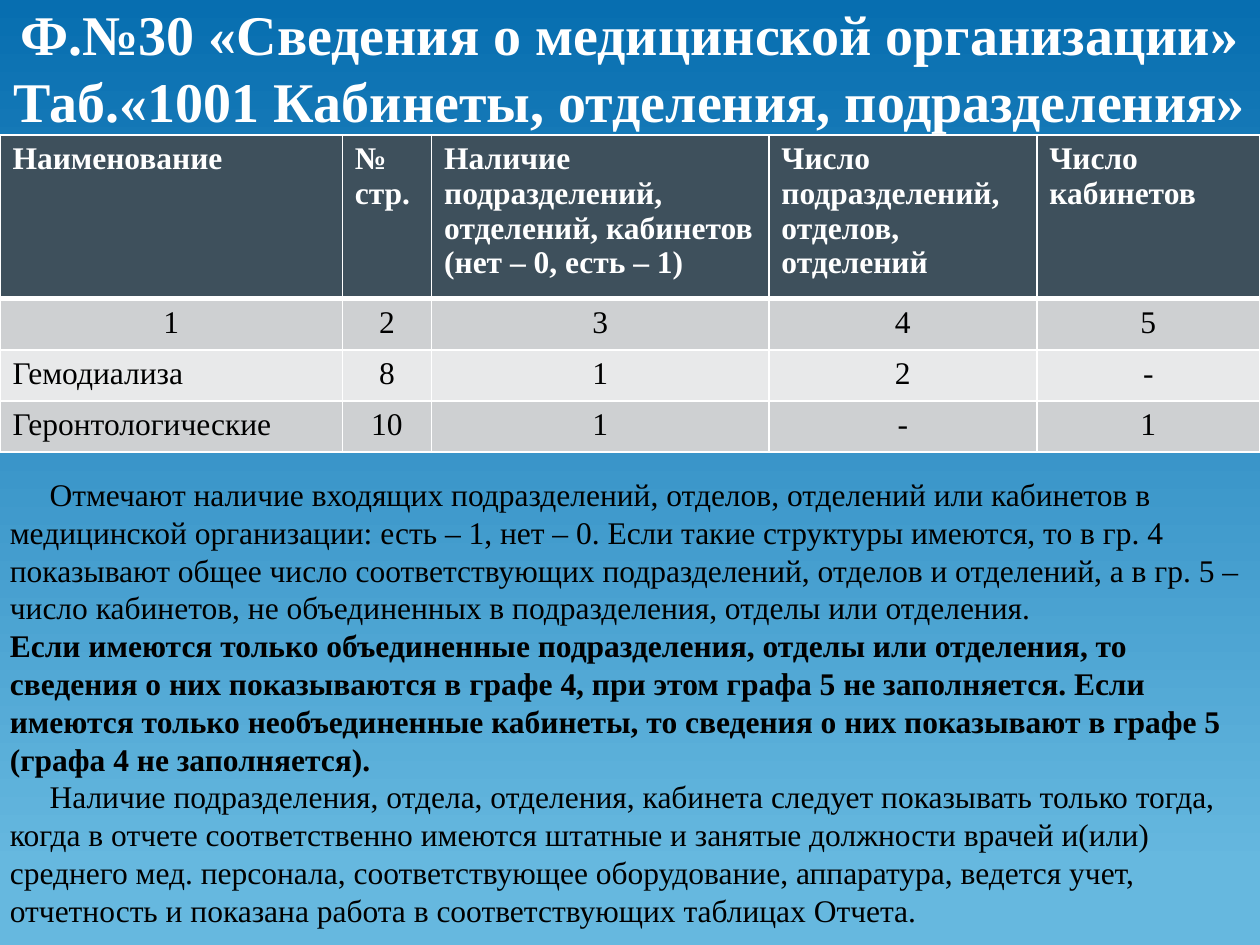
from lxml import etree
from pptx import Presentation
from pptx.dml.color import RGBColor
from pptx.enum.text import MSO_ANCHOR, PP_ALIGN
from pptx.oxml.ns import qn
from pptx.util import Cm, Pt

WHITE = RGBColor(0xFF, 0xFF, 0xFF)
BLACK = RGBColor(0x00, 0x00, 0x00)
HEADER_FILL = RGBColor(0x3E, 0x50, 0x5C)
BAND_FILLS = (RGBColor(0xCE, 0xD0, 0xD2), RGBColor(0xE8, 0xE9, 0xEA))
GRADIENT = ((0, RGBColor(0x07, 0x6E, 0xB0)), (0.92, RGBColor(0x66, 0xB8, 0xDF)))
FONT = "Times New Roman"

TITLE = "Ф.№30 «Сведения о медицинской организации»\vТаб.«1001 Кабинеты, отделения, подразделения»"
COLUMN_WIDTHS = (6.9, 1.8, 6.8, 5.4, 4.5)
ROWS = (
    ("Наименование", "№ стр.",
     "Наличие подразделений, отделений, кабинетов (нет – 0, есть – 1)",
     "Число подразделений, отделов, отделений", "Число кабинетов"),
    ("1", "2", "3", "4", "5"),
    ("Гемодиализа", "8", "1", "2", "-"),
    ("Геронтологические", "10", "1", "-", "1"),
)
# Text, bold, first-line indent in cm
NOTES = (
    ("Отмечают наличие входящих подразделений, отделов, отделений или кабинетов в "
     "медицинской организации: есть – 1, нет – 0. Если такие структуры имеются, то в гр. 4 "
     "показывают общее число соответствующих подразделений, отделов и отделений, а в гр. 5 – "
     "число кабинетов, не объединенных в подразделения, отделы или отделения.", False, 0.8),
    ("Если имеются только объединенные подразделения, отделы или отделения, то "
     "сведения о них показываются в графе 4, при этом графа 5 не заполняется. Если "
     "имеются только необъединенные кабинеты, то сведения о них показывают в графе 5 "
     "(графа 4 не заполняется).", True, 0),
    ("Наличие подразделения, отдела, отделения, кабинета следует показывать только тогда, "
     "когда в отчете соответственно имеются штатные и занятые должности врачей и(или) "
     "среднего мед. персонала, соответствующее оборудование, аппаратура, ведется учет, "
     "отчетность и показана работа в соответствующих таблицах Отчета.", False, 0.8),
)


def format_paragraph(p, size, color, bold, align=PP_ALIGN.LEFT):
    p.alignment = align
    for r in p.runs:
        r.font.name = FONT
        r.font.size = Pt(size)
        r.font.bold = bold
        r.font.color.rgb = color


def set_borders(cell, top, bottom):
    """Draw white borders; top and bottom are widths in points."""
    tc_pr = cell._tc.get_or_add_tcPr()
    sides = (("a:lnL", 1), ("a:lnR", 1), ("a:lnT", top), ("a:lnB", bottom))
    for i, (tag, width) in enumerate(sides):
        ln = etree.Element(qn(tag), w=str(Pt(width)))
        fill = etree.SubElement(ln, qn("a:solidFill"))
        etree.SubElement(fill, qn("a:srgbClr"), val=str(WHITE))
        tc_pr.insert(i, ln)


def set_background(slide):
    fill = slide.background.fill
    fill.gradient()
    fill.gradient_angle = 270
    for stop, (position, color) in zip(fill.gradient_stops, GRADIENT):
        stop.position = position
        stop.color.rgb = color


def add_title(slide, left, top, width, height):
    tf = slide.shapes.add_textbox(left, top, width, height).text_frame
    tf.word_wrap = True
    tf.margin_left = tf.margin_right = tf.margin_top = tf.margin_bottom = 0
    tf.vertical_anchor = MSO_ANCHOR.MIDDLE
    tf.text = TITLE
    format_paragraph(tf.paragraphs[0], 32, WHITE, True, PP_ALIGN.CENTER)


def add_departments_table(slide, left, top, width, header_height, row_height):
    height = header_height + row_height * (len(ROWS) - 1)
    table = slide.shapes.add_table(
        len(ROWS), len(COLUMN_WIDTHS), left, top, width, height).table
    for column, share in zip(table.columns, COLUMN_WIDTHS):
        column.width = int(width * share / sum(COLUMN_WIDTHS))
    for i, values in enumerate(ROWS):
        header = i == 0
        table.rows[i].height = header_height if header else row_height
        for j, value in enumerate(values):
            cell = table.cell(i, j)
            cell.text = value
            cell.fill.solid()
            cell.fill.fore_color.rgb = HEADER_FILL if header else BAND_FILLS[(i - 1) % 2]
            left_aligned = header or (j == 0 and i > 1)
            format_paragraph(cell.text_frame.paragraphs[0], 18, WHITE if header else BLACK,
                             header, PP_ALIGN.LEFT if left_aligned else PP_ALIGN.CENTER)
            set_borders(cell, 3 if i == 1 else 1, 3 if header else 1)


def add_notes_text(slide, left, top, width, height):
    tf = slide.shapes.add_textbox(left, top, width, height).text_frame
    tf.word_wrap = True
    for i, (text, bold, indent) in enumerate(NOTES):
        p = tf.paragraphs[0] if i == 0 else tf.add_paragraph()
        p.text = text
        format_paragraph(p, 18, BLACK, bold)
        p._p.get_or_add_pPr().set("indent", str(Cm(indent)))


def main():
    prs = Presentation()
    prs.slide_width, prs.slide_height = Cm(25.4), Cm(19.05)
    s = prs.slides.add_slide(prs.slide_layouts[6])
    set_background(s)
    add_title(s, 0, 0, prs.slide_width, Cm(2.7))
    add_departments_table(s, 0, Cm(2.72), prs.slide_width, Cm(3), Cm(1.03))
    add_notes_text(s, Cm(-0.05), Cm(9.45), Cm(25.45), Cm(9.5))
    prs.save("out.pptx")


if __name__ == "__main__":
    main()
